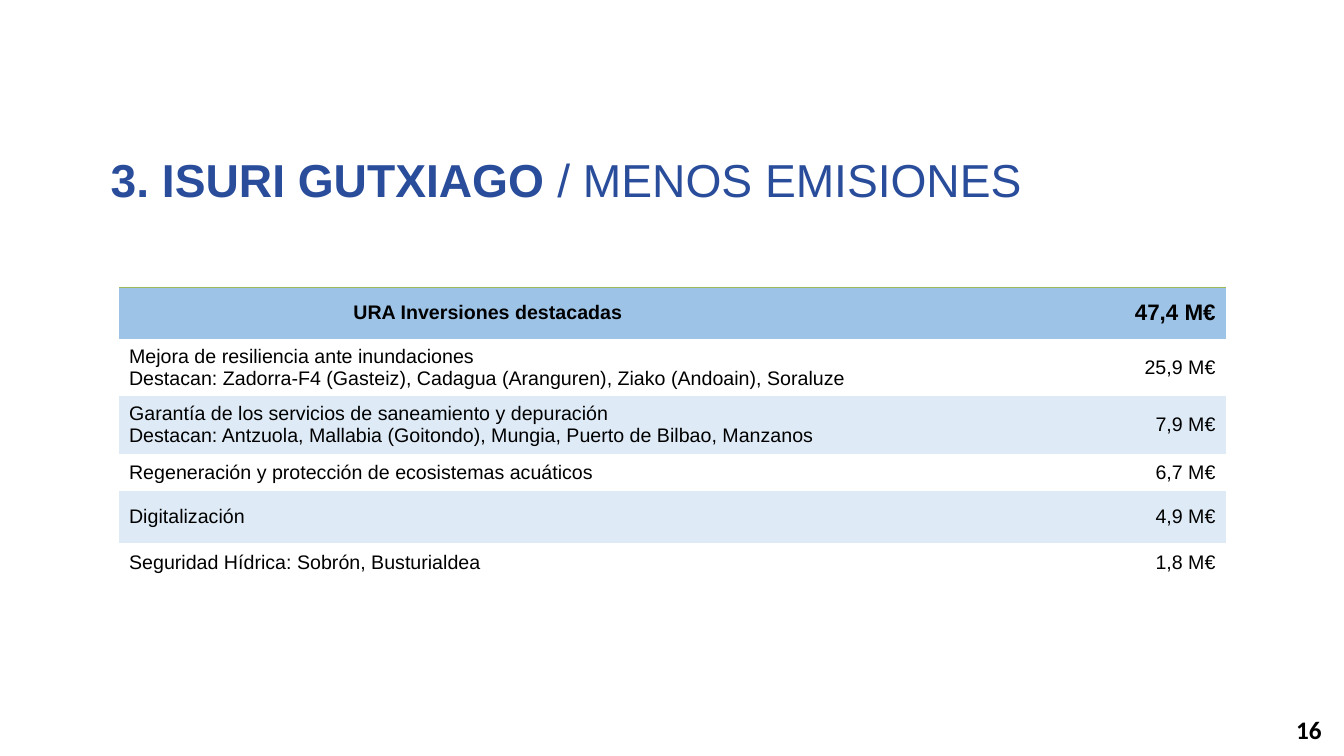
import pptx
import pptx.util
import pptx.dml.color
import pptx.enum.text
import pptx.oxml
import pptx.oxml.ns

Pt = pptx.util.Pt
RGB = pptx.dml.color.RGBColor
ANCHOR = pptx.enum.text.MSO_ANCHOR
ALIGN = pptx.enum.text.PP_ALIGN
FIT = pptx.enum.text.MSO_AUTO_SIZE
qn = pptx.oxml.ns.qn

BLACK = RGB(0x00, 0x00, 0x00)
NAVY = RGB(0x29, 0x4D, 0x9B)
HEAD = RGB(0x9D, 0xC3, 0xE6)
BAND = RGB(0xDE, 0xEB, 0xF7)
WHITE = RGB(0xFF, 0xFF, 0xFF)
RULE = RGB(0x9B, 0xBB, 0x59)
NO_STYLE = "{2D5ABB26-0587-4C30-8999-92F81FD0307C}"

TITLE = {"name": "Arial", "size": Pt(33), "bold": True}
LIGHT = {**TITLE, "bold": False}
PAGE = {"name": "Calibri", "size": Pt(18), "bold": True}
BODY = {"name": "Arial", "size": Pt(14), "bold": False}
LABEL = {**BODY, "bold": True}
TOTAL = {**LABEL, "size": Pt(16)}

# Row height, fill, item lines, amount
ROWS = [
    (36.7, HEAD, ["URA Inversiones destacadas"], "47,4 M€"),
    (41.2, WHITE, ["Mejora de resiliencia ante inundaciones",
                   "Destacan: Zadorra-F4 (Gasteiz), Cadagua (Aranguren), "
                   "Ziako (Andoain), Soraluze"], "25,9 M€"),
    (41.2, BAND, ["Garantía de los servicios de saneamiento y depuración",
                  "Destacan: Antzuola, Mallabia (Goitondo), Mungia, "
                  "Puerto de Bilbao, Manzanos"], "7,9 M€"),
    (26.6, WHITE, ["Regeneración y protección de ecosistemas acuáticos"], "6,7 M€"),
    (36.7, BAND, ["Digitalización"], "4,9 M€"),
    (28.8, WHITE, ["Seguridad Hídrica: Sobrón, Busturialdea"], "1,8 M€"),
]


class Deck:
    def __init__(self, wide, high):
        self.show = pptx.Presentation()
        self.show.slide_width, self.show.slide_height = Pt(wide), Pt(high)
        self.slide = self.show.slides.add_slide(self.show.slide_layouts[6])

    def run(self, para, text, style, color):
        run = para.add_run()
        run.text = text
        for key, value in style.items():
            setattr(run.font, key, value)
        run.font.color.rgb = color

    def text(self, box, parts, color, fit=FIT.NONE):
        frame = self.slide.shapes.add_textbox(*map(Pt, box)).text_frame
        frame.word_wrap = True
        frame.auto_size = fit
        for text, style in parts:
            self.run(frame.paragraphs[0], text, style, color)

    def cell(self, cell, lines, style, align, fill):
        cell.vertical_anchor = ANCHOR.MIDDLE
        cell.fill.solid()
        cell.fill.fore_color.rgb = fill
        frame = cell.text_frame
        for i, line in enumerate(lines):
            para = frame.add_paragraph() if i else frame.paragraphs[0]
            para.alignment = align
            self.run(para, line, style, BLACK)

    def rule(self, cell):
        # Borders stand before the fill in the cell properties
        line = pptx.oxml.parse_xml(
            f'<a:lnT {pptx.oxml.ns.nsdecls("a")} w="12700"><a:solidFill>'
            f'<a:srgbClr val="{RULE}"/></a:solidFill></a:lnT>')
        cell._tc.get_or_add_tcPr().insert(0, line)

    def table(self, left, top, cols, rows):
        high = sum(row[0] for row in rows)
        frame = self.slide.shapes.add_table(
            len(rows), len(cols), Pt(left), Pt(top), Pt(sum(cols)), Pt(high))
        table = frame.table
        table.first_row = table.horz_banding = False
        next(table._tbl.iter(qn("a:tableStyleId"))).text = NO_STYLE
        for col, wide in zip(table.columns, cols):
            col.width = Pt(wide)
        for i, (tall, fill, lines, sum_) in enumerate(rows):
            table.rows[i].height = Pt(tall)
            item, cost = table.cell(i, 0), table.cell(i, 1)
            top_row = i == 0
            self.cell(item, lines, LABEL if top_row else BODY,
                      ALIGN.CENTER if top_row else ALIGN.LEFT, fill)
            self.cell(cost, [sum_], TOTAL if top_row else BODY, ALIGN.RIGHT, fill)
            if top_row:
                self.rule(item)
                self.rule(cost)


def main():
    deck = Deck(960, 540)
    # Investment table
    deck.table(85, 205.2, [527, 263.5], ROWS)
    # Page number
    deck.text((918.7, 506.9, 36, 28.8), [("16", PAGE)], BLACK)
    # Title
    deck.text((72, 104.4, 805.7, 47.5),
              [("3. ISURI GUTXIAGO ", TITLE), ("/ MENOS EMISIONES", LIGHT)],
              NAVY, FIT.SHAPE_TO_FIT_TEXT)
    deck.show.save("out.pptx")


if __name__ == "__main__":
    main()
